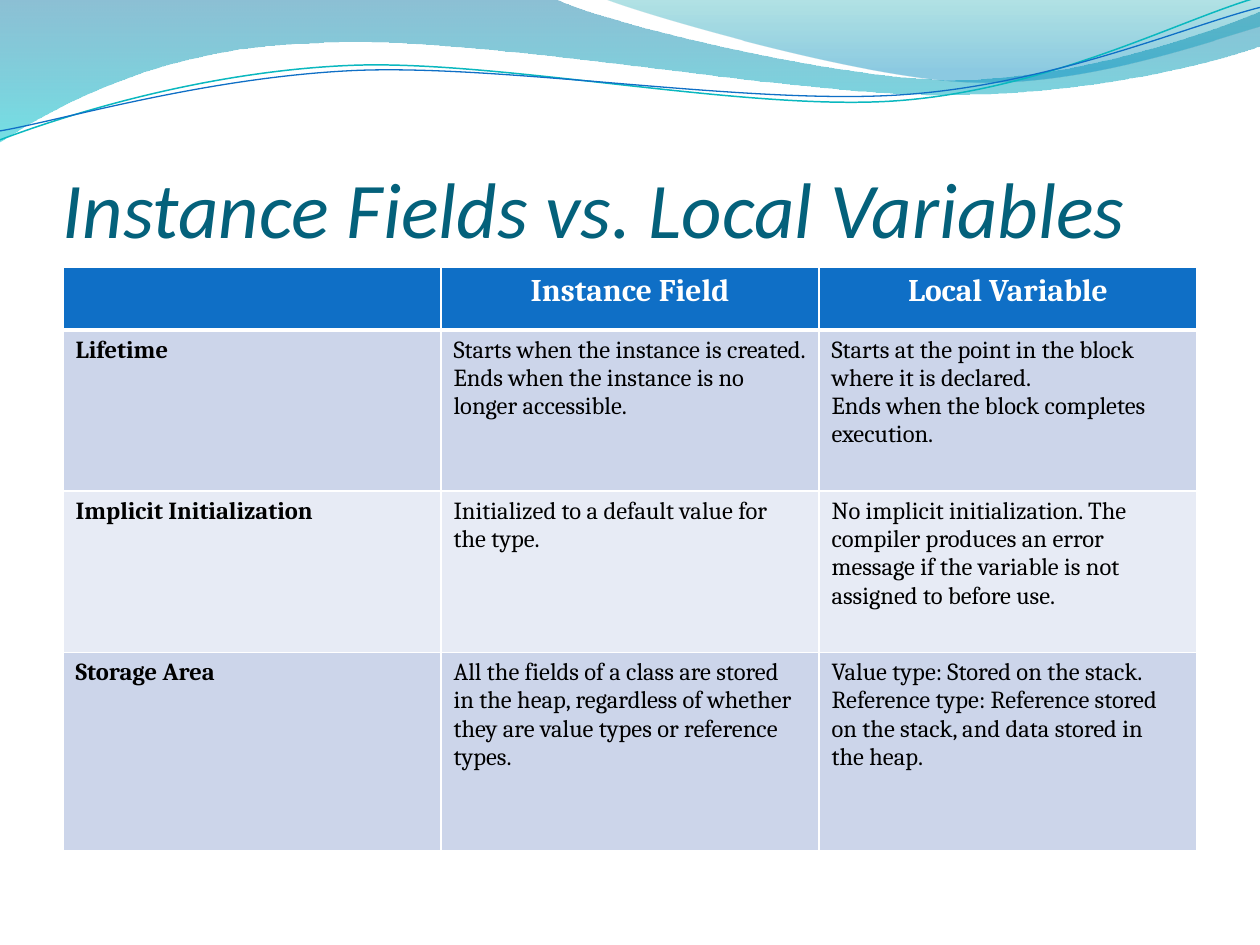
"""Build a slide comparing instance fields with local variables."""
import math

import pptx
import pptx.dml.color
import pptx.enum.text
import pptx.oxml
import pptx.oxml.ns
import pptx.util
from pptx.util import Cm, Pt

TITLE = "Instance Fields vs. Local Variables"
HEADER = ["", "Instance Field", "Local Variable"]
ROWS = [
    ["Lifetime",
     "Starts when the instance is created.\nEnds when the instance is no\nlonger accessible.",
     "Starts at the point in the block\nwhere it is declared.\n"
     "Ends when the block completes\nexecution."],
    ["Implicit Initialization",
     "Initialized to a default value for\nthe type.",
     "No implicit initialization. The\ncompiler produces an error\n"
     "message if the variable is not\nassigned to before use."],
    ["Storage Area",
     "All the fields of a class are stored\nin the heap, regardless of whether\n"
     "they are value types or reference\ntypes.",
     "Value type: Stored on the stack.\nReference type: Reference stored\n"
     "on the stack, and data stored in\nthe heap."],
]
ROW_HEIGHTS = [1.27, 3.25, 3.25, 3.99]
COLUMN_WIDTH = 7.62
HEADER_FILL = "0F6FC6"
BODY_FILLS = ["CCD5EA", "E7EBF5"]

BANDS = [
    {"segments": [
        [(0, 0)], [(11.18, -0.03)],
        [(12.09, 0.43), (16.87, 1.6), (19.25, 1.6)],
        [(21.67, 1.6), (24.33, 0.66), (25.4, 0.23)],
        [(25.43, 0.91)],
        [(24.97, 1.12), (22.1, 1.93), (18.95, 1.91)],
        [(15.8, 1.91), (9.7, 0.71), (6.53, 0.86)],
        [(3.28, 0.91), (1.17, 2.11), (-0.03, 2.87)],
        [(0, 0)]],
     "stops": [(0, "0074A1", 45), (1, "00C6CF", 55)]},
    {"segments": [
        [(12.17, -0.03)],
        [(12.93, 0.28), (17.32, 1.57), (19.53, 1.65)],
        [(21.84, 1.75), (24.41, 0.81), (25.4, 0.53)],
        [(25.4, 0)], [(12.17, -0.03)]],
     "stops": [(0, "00A1A9", 30), (0.8, "008BBF", 45)]},
]
WAVES = [
    {"segments": [
        [(0, 2.82)],
        [(1.22, 2.36), (4.01, 1.45), (7.04, 1.32)],
        [(10.03, 1.19), (15.06, 2.26), (18.11, 2.03)],
        [(21.16, 1.8), (23.83, 0.38), (25.35, -0.05)]],
     "center": (12.68, 1.46), "color": "0AB8BF", "width": 0.85},
    {"segments": [
        [(0, 2.64)],
        [(1.19, 2.44), (4.17, 1.55), (7.19, 1.42)],
        [(10.24, 1.3), (15.16, 2.13), (18.21, 1.91)],
        [(21.23, 1.7), (23.9, 0.53), (25.4, 0.15)]],
     "center": (12.7, 1.5), "color": "0F6FC6", "width": 0.75},
]
WAVE_ROTATION = 357.3


def rgb(color):
    return pptx.dml.color.RGBColor.from_string(color)


def turn(points, center, degrees):
    cosine, sine = math.cos(math.radians(degrees)), math.sin(math.radians(degrees))
    offsets = [(x - center[0], y - center[1]) for x, y in points]
    return [(center[0] + x * cosine - y * sine, center[1] + x * sine + y * cosine)
            for x, y in offsets]


def add_outline(slide, segments, close):
    start, *rest = [(Cm(x), Cm(y)) for segment in segments for x, y in segment]
    builder = slide.shapes.build_freeform(*start)
    builder.add_line_segments(rest, close=close)
    shape = builder.convert_to_shape()
    shape.shadow.inherit = False
    lines = iter(list(shape.element.iter(pptx.oxml.ns.qn("a:lnTo"))))
    for segment in segments[1:]:
        group = [next(lines) for _ in segment]
        if len(group) == 3:
            curve = pptx.oxml.parse_xml(f'<a:cubicBezTo {pptx.oxml.ns.nsdecls("a")}/>')
            group[0].addprevious(curve)
            for line in group:
                curve.append(line[0])
                line.getparent().remove(line)
    return shape


def add_band(slide, band):
    shape = add_outline(slide, band["segments"], True)
    shape.line.fill.background()
    shape.fill.gradient()
    shape.fill.gradient_angle = 270
    for stop, (position, color, _) in zip(shape.fill.gradient_stops, band["stops"]):
        stop.position = position
        stop.color.rgb = rgb(color)
    colors = shape.element.spPr.iter(pptx.oxml.ns.qn("a:srgbClr"))
    for element, (_, _, opacity) in zip(list(colors), band["stops"]):
        element.append(pptx.oxml.parse_xml(
            f'<a:alpha {pptx.oxml.ns.nsdecls("a")} val="{opacity * 1000}"/>'))


def add_wave(slide, wave):
    segments = [turn(segment, wave["center"], 360 - WAVE_ROTATION)
                for segment in wave["segments"]]
    shape = add_outline(slide, segments, False)
    shape.rotation = WAVE_ROTATION
    shape.fill.background()
    shape.line.color.rgb = rgb(wave["color"])
    shape.line.width = Pt(wave["width"])


def add_title(slide):
    frame = slide.shapes.add_textbox(Cm(1.27), Cm(1.96), Cm(22.86), Cm(3.16)).text_frame
    frame.word_wrap = True
    frame.vertical_anchor = pptx.enum.text.MSO_ANCHOR.BOTTOM
    frame.margin_left = frame.margin_right = frame.margin_bottom = 0
    frame.text = TITLE
    font = frame.paragraphs[0].font
    font.name, font.size, font.italic = "Calibri", Pt(45), True
    font.color.rgb = rgb("04617B")


def set_borders(cell, top, bottom):
    properties = cell._tc.get_or_add_tcPr()
    for index, (side, width) in enumerate([("L", 1), ("R", 1), ("T", top), ("B", bottom)]):
        properties.insert(index, pptx.oxml.parse_xml(
            f'<a:ln{side} {pptx.oxml.ns.nsdecls("a")} w="{Pt(width)}"><a:solidFill>'
            f'<a:srgbClr val="FFFFFF"/></a:solidFill></a:ln{side}>'))


def fill_cell(cell, text, row, column):
    is_header = row == 0
    cell.text = text
    cell.fill.solid()
    cell.fill.fore_color.rgb = rgb(HEADER_FILL if is_header else BODY_FILLS[(row - 1) % 2])
    set_borders(cell, 3 if row == 1 else 1, 3 if is_header else 1)
    for paragraph in cell.text_frame.paragraphs:
        if is_header:
            paragraph.alignment = pptx.enum.text.PP_ALIGN.CENTER
        font = paragraph.font
        font.name, font.size = "Cambria", Pt(18 if is_header else 14)
        font.bold = is_header or column == 0
        font.color.rgb = rgb("FFFFFF" if is_header else "000000")


def add_comparison(slide):
    content = [HEADER, *ROWS]
    table = slide.shapes.add_table(
        len(content), len(HEADER), Cm(1.27), Cm(5.38),
        Cm(COLUMN_WIDTH * len(HEADER)), Cm(sum(ROW_HEIGHTS))).table
    for column in table.columns:
        column.width = Cm(COLUMN_WIDTH)
    for row, (texts, height) in enumerate(zip(content, ROW_HEIGHTS)):
        table.rows[row].height = Cm(height)
        for column, text in enumerate(texts):
            fill_cell(table.cell(row, column), text, row, column)


def main():
    presentation = pptx.Presentation()
    presentation.slide_width, presentation.slide_height = Cm(25.4), Cm(19.05)
    slide = presentation.slides.add_slide(presentation.slide_layouts[6])
    for band in BANDS:
        add_band(slide, band)
    for wave in WAVES:
        add_wave(slide, wave)
    add_title(slide)
    add_comparison(slide)
    presentation.save("out.pptx")


if __name__ == "__main__":
    main()
